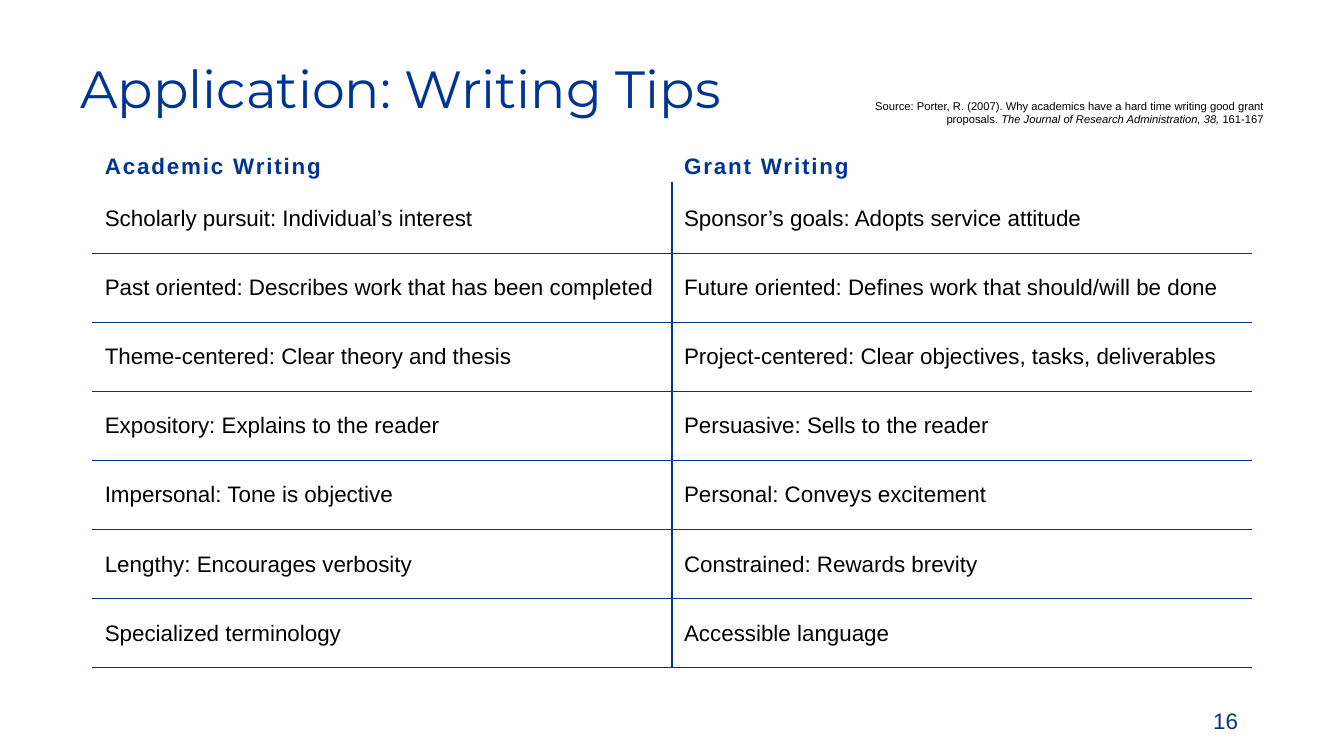
import pptx
import pptx.util
import pptx.dml.color
import pptx.enum.text
import pptx.oxml.ns
import lxml.etree

Inches, Pt = pptx.util.Inches, pptx.util.Pt
ALIGN, ANCHOR = pptx.enum.text.PP_ALIGN, pptx.enum.text.MSO_ANCHOR

COLORS = {"blue": "003493", "black": "000000", "white": "FFFFFF"}

HEADINGS = ("Academic Writing", "Grant Writing")
TIPS = [
    ("Scholarly pursuit: Individual’s interest",
     "Sponsor’s goals: Adopts service attitude"),
    ("Past oriented: Describes work that has been completed",
     "Future oriented: Defines work that should/will be done"),
    ("Theme-centered: Clear theory and thesis",
     "Project-centered: Clear objectives, tasks, deliverables"),
    ("Expository: Explains to the reader", "Persuasive: Sells to the reader"),
    ("Impersonal: Tone is objective", "Personal: Conveys excitement"),
    ("Lengthy: Encourages verbosity", "Constrained: Rewards brevity"),
    ("Specialized terminology", "Accessible language"),
]


class Deck:
    """Holds the style and the current slide."""

    def __init__(self, width, height):
        self.font = "Arial"
        self.prs = pptx.Presentation()
        self.prs.slide_width, self.prs.slide_height = Inches(width), Inches(height)
        self.s = self.prs.slides.add_slide(self.prs.slide_layouts[6])

    def run(self, p, text, size, color, font=None, bold=False, italic=False):
        r = p.add_run()
        r.text = text
        r.font.name, r.font.size = font or self.font, Pt(size)
        r.font.bold, r.font.italic = bold, italic
        r.font.color.rgb = pptx.dml.color.RGBColor.from_string(COLORS[color])
        return r

    def text(self, box, align=ALIGN.LEFT, anchor=ANCHOR.TOP):
        tf = self.s.shapes.add_textbox(*map(Inches, box)).text_frame
        tf.word_wrap, tf.vertical_anchor = True, anchor
        p = tf.paragraphs[0]
        p.alignment = align
        return p

    def border(self, cell, side, color, width):
        tc_pr = cell._tc.get_or_add_tcPr()
        qn = pptx.oxml.ns.qn
        ln = lxml.etree.SubElement(tc_pr, qn(f"a:ln{side}"), w=str(Pt(width)))
        fill = lxml.etree.SubElement(ln, qn("a:solidFill"))
        lxml.etree.SubElement(fill, qn("a:srgbClr"), val=COLORS[color])

    def table(self, box, headings, rows, header_height):
        width, height = box[2:]
        n_cols = len(headings)
        shape = self.s.shapes.add_table(len(rows) + 1, n_cols, *map(Inches, box))
        table = shape.table
        table.first_row = table.horz_banding = False
        for col in table.columns:
            col.width = Inches(width / n_cols)
        row_height = (height - header_height) / len(rows)
        for i, texts in enumerate([headings, *rows]):
            header = i == 0
            table.rows[i].height = Inches(header_height if header else row_height)
            for j, text in enumerate(texts):
                cell = table.cell(i, j)
                cell.margin_left = cell.margin_right = Inches(0.09)
                cell.margin_top = cell.margin_bottom = Inches(0.04)
                cell.vertical_anchor = ANCHOR.BOTTOM if header else ANCHOR.MIDDLE
                r = self.run(cell.text_frame.paragraphs[0], text, 12,
                             "blue" if header else "black", bold=header)
                if header:
                    r.font._element.set("spc", "100")
                # Blue rules between body cells, white elsewhere
                rule, blank = ("blue", 0.75), ("white", 1)
                self.border(cell, "L", *(blank if header or j == 0 else rule))
                self.border(cell, "R", *(blank if header or j == n_cols - 1 else rule))
                self.border(cell, "T", *(blank if i < 2 else rule))
                self.border(cell, "B", *(("white", 3) if header else rule))
                cell.fill.background()


def main():
    deck = Deck(10, 10 * 9 / 16)

    # Title
    p = deck.text((0.5, 0.42, 8.81, 0.96))
    p.line_spacing = 0.9
    deck.run(p, "Application: Writing Tips", 28, "blue", font="Montserrat")

    # Comparison table
    deck.table((0.69, 0.99, 8.62, 3.98), HEADINGS, TIPS, header_height=0.38)

    # Source citation
    p = deck.text((5.78, 0.69, 3.72, 0.3), ALIGN.RIGHT)
    p._p.get_or_add_pPr().set("marL", str(Inches(0.5)))
    for text, italic in [
        ("Source: Porter, R. (2007). Why academics have a hard time "
         "writing good grant proposals. ", False),
        ("The Journal of Research Administration, 38, ", True),
        ("161-167", False),
    ]:
        deck.run(p, text, 6, "black", italic=italic)

    # Slide number
    p = deck.text((7.06, 5.21, 2.25, 0.3), ALIGN.RIGHT, ANCHOR.MIDDLE)
    deck.run(p, "16", 12, "blue")

    deck.prs.save("out.pptx")


if __name__ == "__main__":
    main()
